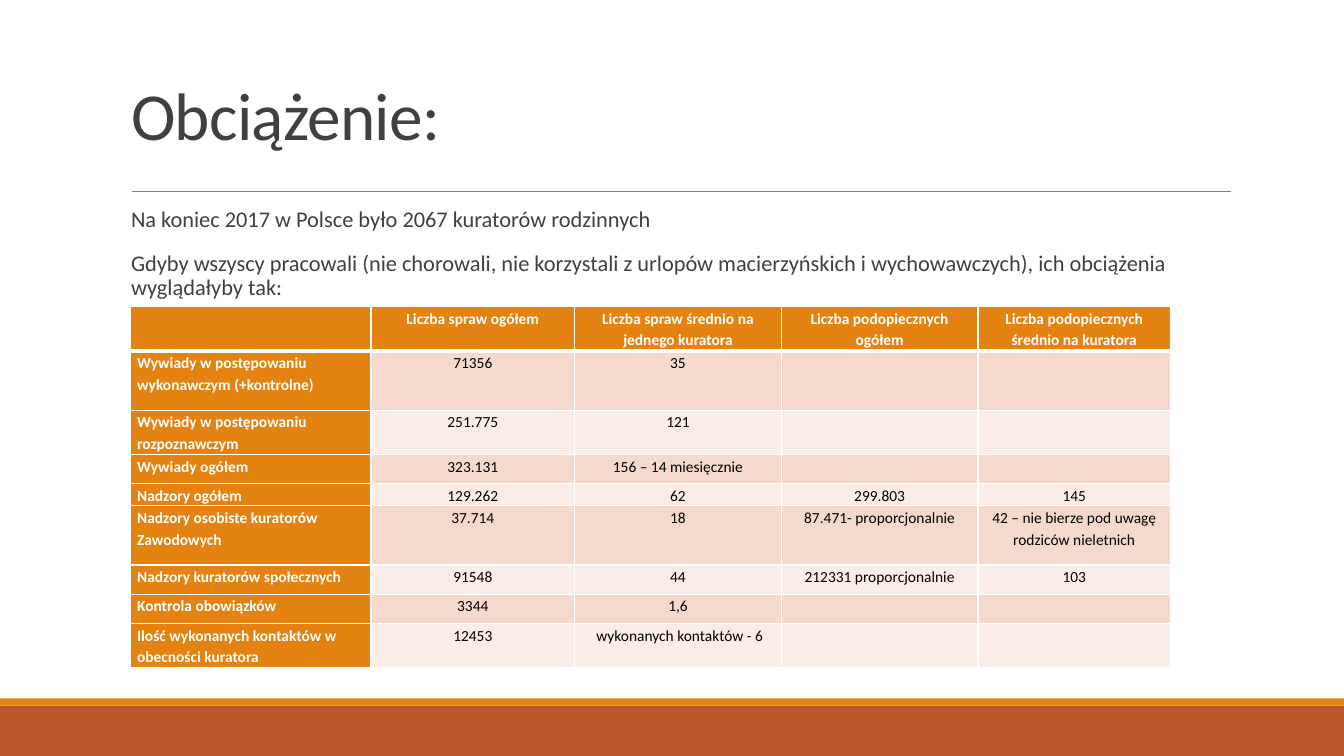
from lxml import etree
from pptx import Presentation
from pptx.dml.color import RGBColor
from pptx.enum.shapes import MSO_CONNECTOR, MSO_SHAPE
from pptx.enum.text import MSO_ANCHOR, MSO_AUTO_SIZE, PP_ALIGN
from pptx.oxml.ns import qn
from pptx.util import Pt

PX = 9144
FONT = "Calibri"
LEFT, CENTER = PP_ALIGN.LEFT, PP_ALIGN.CENTER
TOP, BOTTOM = MSO_ANCHOR.TOP, MSO_ANCHOR.BOTTOM
NO_AUTOFIT = MSO_AUTO_SIZE.NONE
RECTANGLE = MSO_SHAPE.RECTANGLE
STRAIGHT = MSO_CONNECTOR.STRAIGHT

COLORS = {
    "orange": "E48312",
    "rust": "BD582C",
    "gray": "808080",
    "ink": "404040",
    "black": "000000",
    "white": "FFFFFF",
    "odd": "F5D9CC",
    "even": "FAEDE7",
}

TITLE = "Obciążenie:"
INTRO = [
    "Na koniec 2017 w Polsce było 2067 kuratorów rodzinnych",
    "Gdyby wszyscy pracowali (nie chorowali, nie korzystali z urlopów macierzyńskich "
    "i wychowawczych), ich obciążenia wyglądałyby tak:",
]
COLUMN_WIDTHS = [239, 202, 205, 195, 191]
ROW_HEIGHTS = [44, 59, 44, 29, 20, 59, 29, 29, 44]
WORKLOAD = [
    ["", "Liczba spraw ogółem", "Liczba spraw średnio na jednego kuratora",
     "Liczba podopiecznych ogółem", "Liczba podopiecznych średnio na kuratora"],
    ["Wywiady w postępowaniu wykonawczym (+kontrolne)", "71356", "35", "", ""],
    ["Wywiady w postępowaniu rozpoznawczym", "251.775", "121", "", ""],
    ["Wywiady ogółem", "323.131", "156 – 14 miesięcznie", "", ""],
    ["Nadzory ogółem", "129.262", "62", "299.803", "145"],
    ["Nadzory osobiste kuratorów\nZawodowych", "37.714", "18", "87.471- proporcjonalnie",
     "42 – nie bierze pod uwagę rodziców nieletnich"],
    ["Nadzory kuratorów społecznych", "91548", "44", "212331 proporcjonalnie", "103"],
    ["Kontrola obowiązków", "3344", "1,6", "", ""],
    ["Ilość wykonanych kontaktów w obecności kuratora", "12453",
     " wykonanych kontaktów - 6", "", ""],
]


def color(name):
    """Return the palette colour with this name."""
    return RGBColor.from_string(COLORS[name])


def scaled(*lengths):
    """Turn px lengths into EMU."""
    return [length * PX for length in lengths]


def set_values(target, values):
    """Set each named attribute on the target."""
    for name, value in values.items():
        setattr(target, name, value)


def place(shape, box):
    """Move a shape to its box."""
    set_values(shape, dict(zip(("left", "top", "width", "height"), scaled(*box))))


def format_text(frame, ink, font_values, para_values):
    """Apply one format to all the paragraphs of a text frame."""
    for para in frame.paragraphs:
        set_values(para, para_values)
        for span in para.runs:
            set_values(span.font, {"name": FONT, **font_values})
            span.font.color.rgb = color(ink)


def add_bar(page, box, fill):
    """Draw a plain coloured band."""
    bar = page.shapes.add_shape(RECTANGLE, *scaled(*box))
    bar.shadow.inherit = False
    bar.fill.solid()
    bar.fill.fore_color.rgb = color(fill)
    bar.line.fill.background()


def add_frame(page, box):
    """Draw the two footer bands and the rule under the title."""
    left, top, width, height = box
    add_bar(page, (left, top + height - 50, width, 50), "rust")
    add_bar(page, (left, top + height - 57, width, 7), "orange")
    rule_y = top + 190
    rule = page.shapes.add_connector(
        STRAIGHT, *scaled(left + 131, rule_y, left + width - 112, rule_y))
    rule.line.color.rgb = color("gray")
    rule.line.width = Pt(0.5)
    etree.SubElement(rule._element.spPr, qn("a:effectLst"))


def fill_title(page, box):
    """Write the title into its placeholder."""
    title = page.shapes.title
    place(title, box)
    frame = title.text_frame
    frame.text = TITLE
    set_values(frame, {"vertical_anchor": BOTTOM, "auto_size": NO_AUTOFIT, "word_wrap": True})
    format_text(frame, "ink", {"size": Pt(48)}, {"alignment": LEFT, "line_spacing": 0.85})
    frame.paragraphs[0].runs[0].font._element.set("spc", "-50")


def fill_intro(page, box):
    """Write the introduction into the body placeholder."""
    body = page.placeholders[1]
    place(body, box)
    frame = body.text_frame
    frame.text = "\n".join(INTRO)
    set_values(frame, {"vertical_anchor": TOP, "auto_size": NO_AUTOFIT, "word_wrap": True,
                       "margin_left": 0, "margin_right": 0})
    format_text(frame, "ink", {"size": Pt(16)},
                {"alignment": LEFT, "line_spacing": 0.9,
                 "space_before": Pt(12), "space_after": Pt(2)})
    for para in frame.paragraphs:
        properties = para._p.get_or_add_pPr()
        properties.set("marL", str(10 * PX))
        properties.set("indent", "0")
        etree.SubElement(properties, qn("a:buNone"))


def add_borders(cell, widths):
    """Give a cell white borders with a width in points for each side."""
    properties = cell._tc.get_or_add_tcPr()
    for side, width in widths.items():
        line = etree.SubElement(properties, qn(f"a:ln{side}"), w=str(Pt(width)))
        fill = etree.SubElement(line, qn("a:solidFill"))
        etree.SubElement(fill, qn("a:srgbClr"), val=COLORS["white"])


def fill_cell(cell, text, row, column):
    """Write and format one cell by its place in the table."""
    heading = row == 0 or column == 0
    set_values(cell, {"margin_left": 7 * PX, "margin_right": 7 * PX,
                      "margin_top": 0, "margin_bottom": 0, "vertical_anchor": TOP})
    add_borders(cell, {"L": 1, "R": 1, "T": 3 if row == 1 else 1, "B": 3 if row == 0 else 1})
    cell.fill.solid()
    cell.fill.fore_color.rgb = color("orange" if heading else ("even", "odd")[row % 2])
    cell.text = text
    format_text(cell.text_frame, "white" if heading else "black",
                {"size": Pt(11), "bold": heading},
                {"alignment": CENTER if column or row == 0 else LEFT, "line_spacing": 1.15})
    if not text:
        cell.text_frame.paragraphs[0]._p.get_or_add_endParaRPr().set("sz", "1100")


def add_workload_table(page, box):
    """Build the workload table."""
    shape = page.shapes.add_table(len(ROW_HEIGHTS), len(COLUMN_WIDTHS), *scaled(*box))
    table = shape.table
    for column, width in zip(table.columns, scaled(*COLUMN_WIDTHS)):
        column.width = width
    for row, height in zip(table.rows, scaled(*ROW_HEIGHTS)):
        row.height = height
    for row, texts in enumerate(WORKLOAD):
        for column, text in enumerate(texts):
            fill_cell(table.cell(row, column), text, row, column)


def main():
    """Build the deck and save it."""
    deck = Presentation()
    deck.slide_width, deck.slide_height = scaled(1333, 750)
    page = deck.slides.add_slide(deck.slide_layouts[1])
    add_frame(page, (0, 0, 1333, 750))
    fill_title(page, (120, 31, 1100, 127))
    fill_intro(page, (120, 202, 1100, 440))
    add_workload_table(page, (129, 304, sum(COLUMN_WIDTHS), sum(ROW_HEIGHTS)))
    deck.save("out.pptx")


if __name__ == "__main__":
    main()
